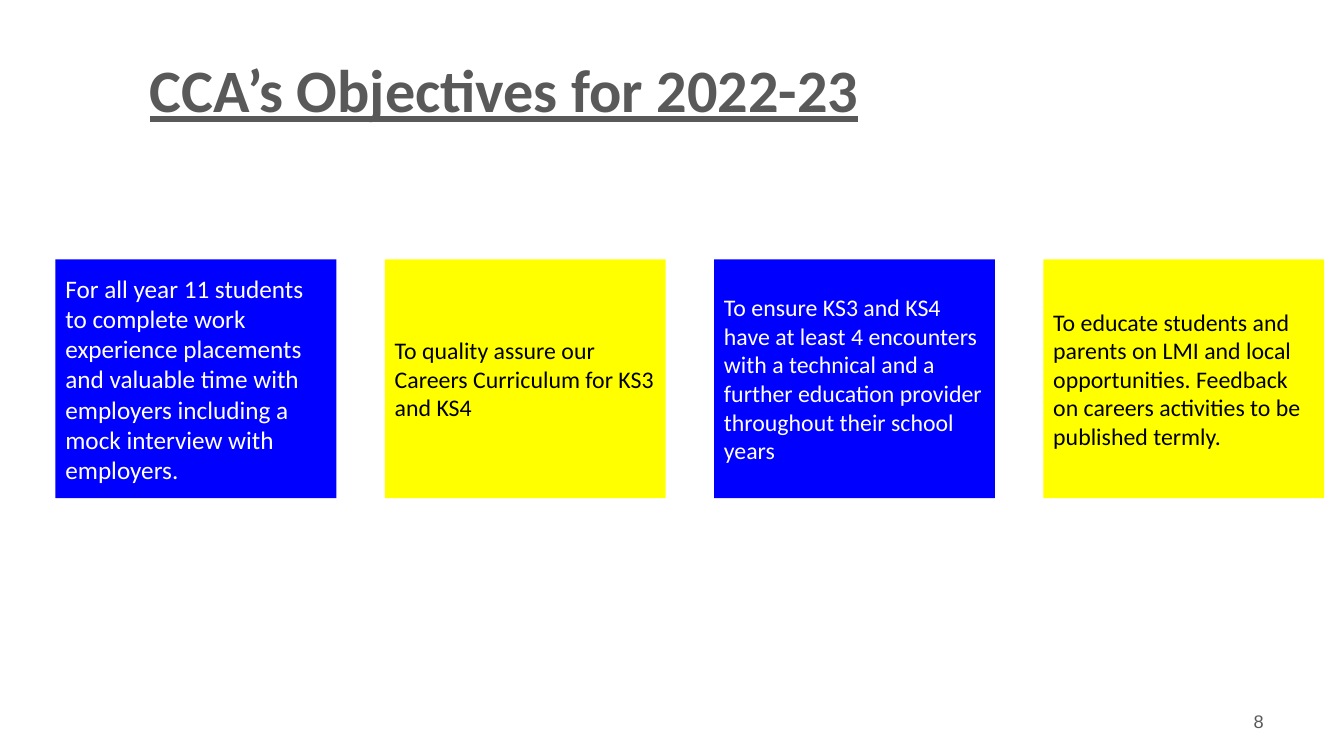
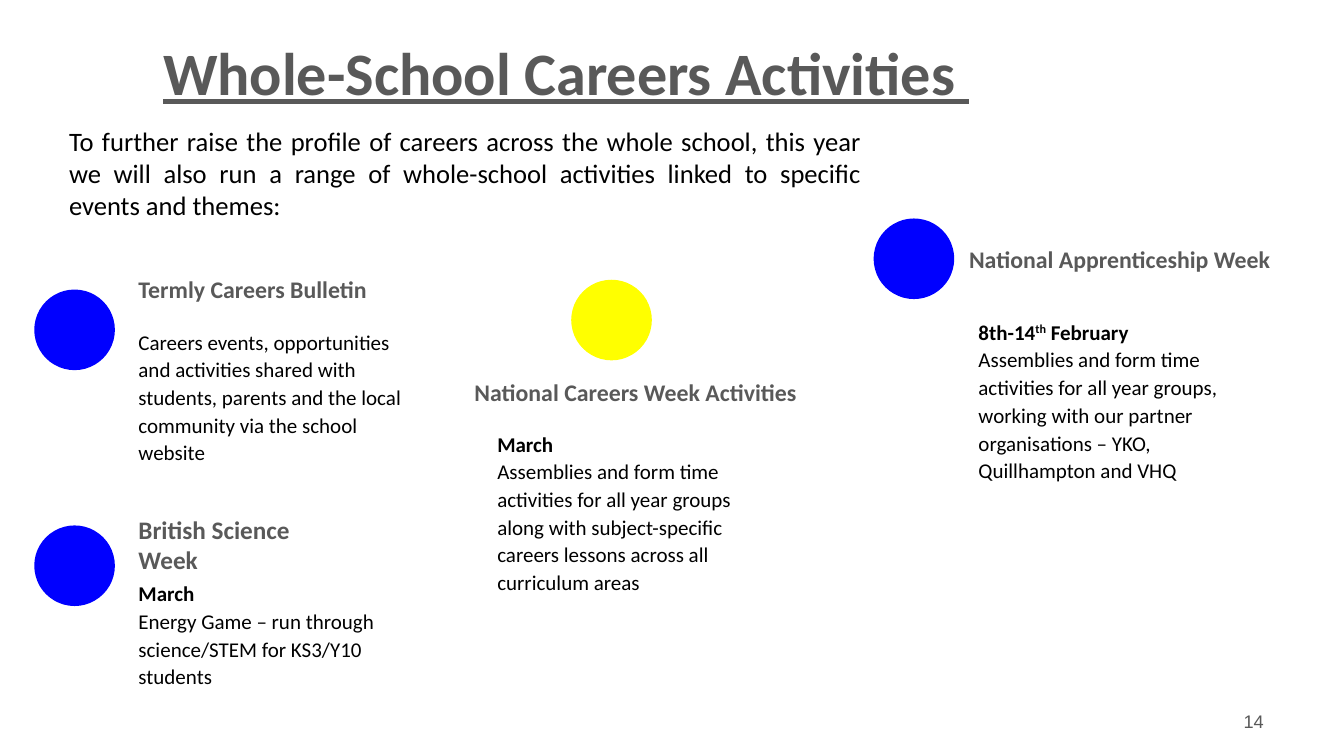
from dataclasses import dataclass

import pptx
import pptx.dml.color
import pptx.enum.shapes
import pptx.enum.text
import pptx.util

ALIGN = pptx.enum.text.PP_ALIGN
ANCHOR = pptx.enum.text.MSO_ANCHOR
SHAPE = pptx.enum.shapes.MSO_SHAPE


@dataclass(frozen=True)
class Theme:
    # Slide size in inches
    width: float = 13.33
    height: float = 7.5
    # Colours
    blue: str = "0000FF"
    yellow: str = "FFFF00"
    white: str = "FFFFFF"
    black: str = "000000"
    grey: str = "595959"
    # Fonts and type sizes
    font: str = "Calibri"
    footer_font: str = "Arial"
    title: int = 43
    intro: int = 19
    heading: int = 17
    large: int = 18
    body: int = 15
    footer: int = 13
    # Text insets in inches: horizontal, vertical
    normal_inset: tuple = (0.1, 0.05)
    item_inset: tuple = (0.12, 0.06)
    frame_inset: tuple = (0.13, 0.07)


T = Theme()


def place(left, top, width, height):
    """Turn percentages of the slide's size into lengths."""
    return [pptx.util.Inches(share * side / 100) for share, side in
            zip((left, top, width, height), (T.width, T.height) * 2)]


def rgb(color):
    return pptx.dml.color.RGBColor.from_string(color)


def style(font, size, color, bold=False, name=T.font):
    font.name, font.size, font.bold = name, pptx.util.Pt(size), bold
    font.color.rgb = rgb(color)


def set_frame(tf, inset, anchor):
    tf.word_wrap = True
    tf.vertical_anchor = anchor
    tf.margin_left = tf.margin_right = pptx.util.Inches(inset[0])
    tf.margin_top = tf.margin_bottom = pptx.util.Inches(inset[1])


def add_text(s, box, text, size, color, bold=False, name=T.font,
             inset=T.item_inset, anchor=ANCHOR.TOP, align=ALIGN.LEFT):
    tf = s.shapes.add_textbox(*place(*box)).text_frame
    set_frame(tf, inset, anchor)
    tf.text = text
    p = tf.paragraphs[0]
    p.alignment = align
    style(p.runs[0].font, size, color, bold, name)
    return p


def add_title(s, box, text, **layout):
    p = add_text(s, box, text, T.title, T.grey, bold=True, **layout)
    p.line_spacing = 0.9
    p.runs[0].font.underline = True


def add_page_number(s, number):
    add_text(s, (71.7, 92.7, 23.3, 5.3), str(number), T.footer, T.grey,
             name=T.footer_font, inset=T.frame_inset,
             anchor=ANCHOR.MIDDLE, align=ALIGN.RIGHT)


def add_filled(s, kind, box, fill):
    sp = s.shapes.add_shape(kind, *place(*box))
    sp.shadow.inherit = False
    sp.fill.solid()
    sp.fill.fore_color.rgb = rgb(fill)
    sp.line.fill.background()
    return sp


def add_card(s, box, text, size, fill, color):
    tf = add_filled(s, SHAPE.RECTANGLE, box, fill).text_frame
    set_frame(tf, T.normal_inset, ANCHOR.MIDDLE)
    tf.text = text
    p = tf.paragraphs[0]
    p.alignment = ALIGN.LEFT
    style(p.runs[0].font, size, color)


def add_details(s, left, top, date, text):
    """Body text under an optional bold date; date is (text, raised) pieces."""
    height = 12.4 if date else 9.6
    tf = s.shapes.add_textbox(*place(left, top, 23, height)).text_frame
    set_frame(tf, T.item_inset, ANCHOR.TOP)
    tf.auto_size = pptx.enum.text.MSO_AUTO_SIZE.SHAPE_TO_FIT_TEXT
    p = tf.paragraphs[0]
    for piece, raised in date:
        r = p.add_run()
        r.text = piece
        style(r.font, T.body, T.black, bold=True)
        if raised:
            r._r.get_or_add_rPr().set("baseline", "30000")
    if date:
        p = tf.add_paragraph()
    p.text = text
    style(p.runs[0].font, T.body, T.black)
    for p in tf.paragraphs:
        p.line_spacing = 1.1


def add_activity(s, dot, fill, head, heading, size, body, date, text):
    """A coloured dot, a heading and its details."""
    diameter = 6
    add_filled(s, SHAPE.OVAL,
               (*dot, diameter, diameter * T.width / T.height), fill)
    add_text(s, (*head, 5.5), heading, size, T.grey, bold=True)
    add_details(s, *body, date, text)


def objectives_slide(s):
    add_title(s, (5, 4, 65, 16.7), "CCA’s Objectives for 2022-23",
              inset=T.frame_inset, anchor=ANCHOR.MIDDLE, align=ALIGN.CENTER)
    add_page_number(s, 8)

    # Row of four cards in alternating colours
    objectives = [
        ("For all year 11 students to complete work experience placements "
         "and valuable time with employers including a mock interview with "
         "employers.", T.large),
        ("To quality assure our Careers Curriculum for KS3 and KS4",
         T.heading),
        ("To ensure KS3 and KS4 have at least 4 encounters with a technical "
         "and a further education provider throughout their school years",
         T.heading),
        ("To educate students and parents on LMI and local opportunities. "
         "Feedback on careers activities to be published termly.",
         T.heading),
    ]
    colors = [(T.blue, T.white), (T.yellow, T.black)]
    first, pitch = 4.13, 24.5
    for i, (text, size) in enumerate(objectives):
        add_card(s, (first + i * pitch, 34.3, 20.9, 31.6), text, size,
                 *colors[i % 2])


def activities_slide(s):
    add_title(s, (11.4, 5.1, 86, 8.3), "Whole-School Careers Activities ",
              inset=T.normal_inset)
    add_page_number(s, 14)
    add_text(s, (4.4, 15.9, 60.4, 18.4),
             "To further raise the profile of careers across the whole "
             "school, this year we will also run a range of whole-school "
             "activities linked to specific events and themes:",
             T.intro, T.black, inset=T.normal_inset, align=ALIGN.JUSTIFY)

    # Left column: two activities sharing one indent
    dot_left, text_left = 2.55, 9.4
    march = [("March", False)]
    add_activity(s, (dot_left, 38.3), T.blue,
                 (text_left, 35.6, 19.3), "Termly Careers Bulletin",
                 T.heading, (text_left, 42.4), [],
                 "Careers events, opportunities and activities shared with "
                 "students, parents and the local community via the school "
                 "website")
    add_activity(s, (dot_left, 69.5), T.blue,
                 (text_left, 67.2, 17.5), "British Science Week",
                 T.large, (text_left, 75.7), march,
                 "Energy Game – run through science/STEM for KS3/Y10 "
                 "students")

    # Middle and right columns
    add_activity(s, (42.5, 37), T.yellow,
                 (34.4, 49.1, 26.4), "National Careers Week Activities",
                 T.heading, (36.1, 55.9), march,
                 "Assemblies and form time activities for all year groups "
                 "along with subject-specific careers lessons across all "
                 "curriculum areas")
    add_activity(s, (65, 28.9), T.blue,
                 (71.2, 31.6, 24.5), "National Apprenticeship Week",
                 T.heading, (71.9, 41.1),
                 [("8th-14", False), ("th", True), (" February", False)],
                 "Assemblies and form time activities for all year groups, "
                 "working with our partner organisations – YKO, "
                 "Quillhampton and VHQ")


def main():
    prs = pptx.Presentation()
    prs.slide_width = pptx.util.Inches(T.width)
    prs.slide_height = pptx.util.Inches(T.height)
    blank = prs.slide_layouts[6]
    for build in (objectives_slide, activities_slide):
        build(prs.slides.add_slide(blank))
    prs.save("out.pptx")


if __name__ == "__main__":
    main()
